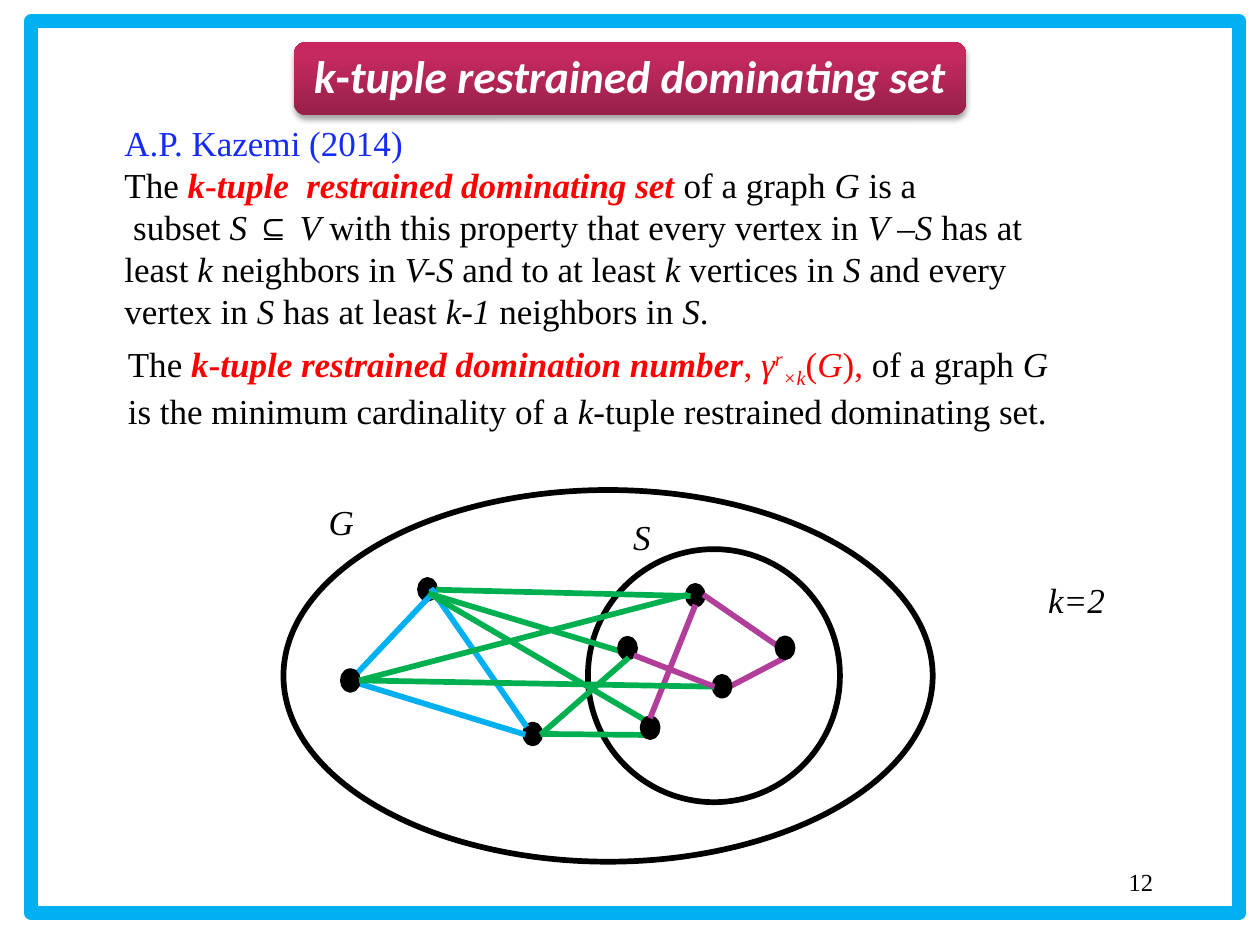
from copy import deepcopy

from lxml import etree
from pptx import Presentation
from pptx.dml.color import RGBColor
from pptx.enum.shapes import MSO_CONNECTOR as CONNECTOR, MSO_SHAPE as SHAPE
from pptx.enum.text import MSO_ANCHOR as ANCHOR, PP_ALIGN as ALIGN
from pptx.oxml.ns import qn
from pptx.util import Pt

BLACK = RGBColor(0, 0, 0)
WHITE = RGBColor(255, 255, 255)
RED = RGBColor(255, 0, 0)
BLUE = RGBColor(0x15, 0x2B, 0xF9)
SKY = RGBColor(0x00, 0xB0, 0xF0)
GREEN = RGBColor(0x00, 0xB0, 0x50)
PURPLE = RGBColor(0xB1, 0x3F, 0x9A)
TITLE_STOPS = [(0, RGBColor(0x97, 0x20, 0x49)), (0.8, RGBColor(0xC4, 0x29, 0x5F)),
               (1, RGBColor(0xC8, 0x26, 0x5F))]
SERIF = "Times New Roman"
GRAPH_LINE = 3.25
DOT_WIDTH, DOT_HEIGHT = 8.6, 10.8

# A run is (text, style, colour); style letters: b bold, i italic, ^ raised, _ lowered.
TITLE = [[("k", "bi"), ("-", "b"), ("tuple restrained dominating set", "bi")]]
DEFINITION = [
    [("A.P. Kazemi (2014)", "", BLUE)],
    [("The ",), ("k", "bi", RED), ("-", "b", RED),
     ("tuple  restrained dominating set ", "bi", RED),
     ("of a graph ",), ("G ", "i"), ("is a",)],
    [(" subset ",), ("S ⊆ V ", "i"), ("with this property that every vertex in ",),
     ("V –S ", "i"), ("has at",)],
    [("least ",), ("k ", "i"), ("neighbors in ",), ("V-S ", "i"), ("and to at least ",),
     ("k", "i"), (" vertices in ",), ("S", "i"), (" and every vertex in ",), ("S ", "i"),
     ("has at least ",), ("k-1 ", "i"), ("neighbors in ",), ("S", "i"), (".",)],
]
NUMBER_DEFINITION = [
    [("The ",), ("k", "bi", RED), ("-", "b", RED),
     ("tuple restrained domination number", "bi", RED), (", ", "", RED),
     ("γ", "i", RED), ("r", "i^", RED), ("×k", "i_", RED), ("(", "", RED),
     ("G", "i", RED), ("), ", "", RED), ("of a graph ",), ("G ", "i"),
     ("is the minimum cardinality of a ",), ("k", "i"),
     ("-tuple restrained dominating set.",)],
]
LABELS = [("G", (174.2, 282.2, 41.8, 31.7)), ("S", (342.7, 290.9, 48.2, 31.7)),
          ("k=2", (588.2, 326.9, 54, 31.7))]

# Drawing order of the graph: dot centres, then edges (colour, from, to).
GRAPH_LAYERS = [
    ([(244.3, 336.8), (397.3, 340.2), (304.4, 419.4)],
     [(GREEN, (249.1, 337), (394.6, 340.6)),
      (SKY, (246.2, 336.2), (301, 415.4)),
      (PURPLE, (401.8, 339.8), (450, 373)),
      (GREEN, (246.2, 339.8), (376.6, 416.2)),
      (SKY, (200.2, 388.8), (249.1, 337)),
      (SKY, (203.8, 390.2), (300.2, 419.8)),
      (GREEN, (244.8, 339.1), (362.2, 374.4)),
      (GREEN, (308.9, 419.4), (368.6, 420)),
      (PURPLE, (448.6, 375.8), (416.9, 392.4))]),
    ([(358.6, 370.4), (200.2, 388.8), (371.5, 415.8), (448.6, 370.2), (412.6, 392.2)],
     [(GREEN, (308.9, 419.8), (359.3, 375.8)),
      (PURPLE, (397.4, 345.6), (371.5, 410.4)),
      (GREEN, (205.2, 388.8), (408.2, 392.4)),
      (GREEN, (205.2, 388.8), (393.1, 339.8)),
      (PURPLE, (408.2, 392.4), (362.2, 374.4))]),
]


def write_text(shape, paragraphs, size=20, font=SERIF, color=BLACK, align=ALIGN.LEFT,
               anchor=ANCHOR.TOP, line_spacing=None):
    frame = shape.text_frame
    frame.word_wrap = True
    frame.vertical_anchor = anchor
    for index, runs in enumerate(paragraphs):
        paragraph = frame.add_paragraph() if index else frame.paragraphs[0]
        paragraph.alignment = align
        if line_spacing:
            paragraph.line_spacing = line_spacing
        for text, *options in runs:
            style = options[0] if options else ""
            run = paragraph.add_run()
            run.text = text
            run.font.name, run.font.size = font, Pt(size)
            run.font.bold, run.font.italic = "b" in style, "i" in style
            run.font.color.rgb = options[1] if len(options) > 1 else color
            for mark, baseline in (("^", "30000"), ("_", "-25000")):
                if mark in style:
                    run.font._element.set("baseline", baseline)


def add_text(slide, box, paragraphs, **style):
    text_box = slide.shapes.add_textbox(*map(Pt, box))
    write_text(text_box, paragraphs, **style)


def add_outline(slide, preset, box, line=BLACK, width=GRAPH_LINE, fill=None):
    shape = slide.shapes.add_shape(preset, *map(Pt, box))
    shape.shadow.inherit = False
    if fill is None:
        shape.fill.background()
    else:
        shape.fill.solid()
        shape.fill.fore_color.rgb = fill
    shape.line.color.rgb = line
    shape.line.width = Pt(width)


def add_edge(slide, color, start, end):
    edge = slide.shapes.add_connector(CONNECTOR.STRAIGHT, *map(Pt, start + end))
    edge.line.color.rgb = color
    edge.line.width = Pt(GRAPH_LINE)
    etree.SubElement(edge._element.spPr, qn("a:effectLst"))


def add_title(slide):
    title = slide.shapes.add_shape(SHAPE.ROUNDED_RECTANGLE, *map(Pt, (168, 24, 384, 42)))
    title.line.fill.background()
    title.fill.gradient()
    title.fill.gradient_angle = 90
    stop_list = title._element.spPr.find(".//" + qn("a:gsLst"))
    stop_list.append(deepcopy(stop_list[-1]))
    for stop, (position, color) in zip(title.fill.gradient_stops, TITLE_STOPS):
        stop.position = position
        stop.color.rgb = color
    title.shadow.inherit = False
    effects = title._element.spPr.find(qn("a:effectLst"))
    shadow = etree.SubElement(effects, qn("a:outerShdw"), blurRad=str(Pt(3.1)),
                              dist=str(Pt(1.8)), dir="5400000", rotWithShape="0")
    shade = etree.SubElement(shadow, qn("a:srgbClr"), val="000000")
    etree.SubElement(shade, qn("a:alpha"), val="35000")
    write_text(title, TITLE, size=26, font="Calibri", color=WHITE, align=ALIGN.CENTER,
               anchor=ANCHOR.MIDDLE, line_spacing=0.9)


def main():
    presentation = Presentation()
    presentation.slide_width, presentation.slide_height = Pt(720), Pt(540)
    slide = presentation.slides.add_slide(presentation.slide_layouts[6])

    add_text(slide, (516, 492, 150, 36), [[("12",)]], size=14, align=ALIGN.RIGHT)
    add_outline(slide, SHAPE.RECTANGLE, (18, 12, 690, 510), line=SKY, width=8)
    add_outline(slide, SHAPE.OVAL, (162, 280, 371, 212.4))
    add_outline(slide, SHAPE.OVAL, (336, 313.8, 144, 144.6))
    add_title(slide)
    add_text(slide, (64, 66, 558, 128), DEFINITION)
    add_text(slide, (66, 192, 558, 55.7), NUMBER_DEFINITION)
    for label, box in LABELS:
        add_text(slide, box, [[(label, "i")]], align=ALIGN.CENTER)

    for dots, edges in GRAPH_LAYERS:
        for x, y in dots:
            box = (x - DOT_WIDTH / 2, y - DOT_HEIGHT / 2, DOT_WIDTH, DOT_HEIGHT)
            add_outline(slide, SHAPE.OVAL, box, fill=BLACK)
        for edge in edges:
            add_edge(slide, *edge)

    presentation.save("out.pptx")


if __name__ == "__main__":
    main()
